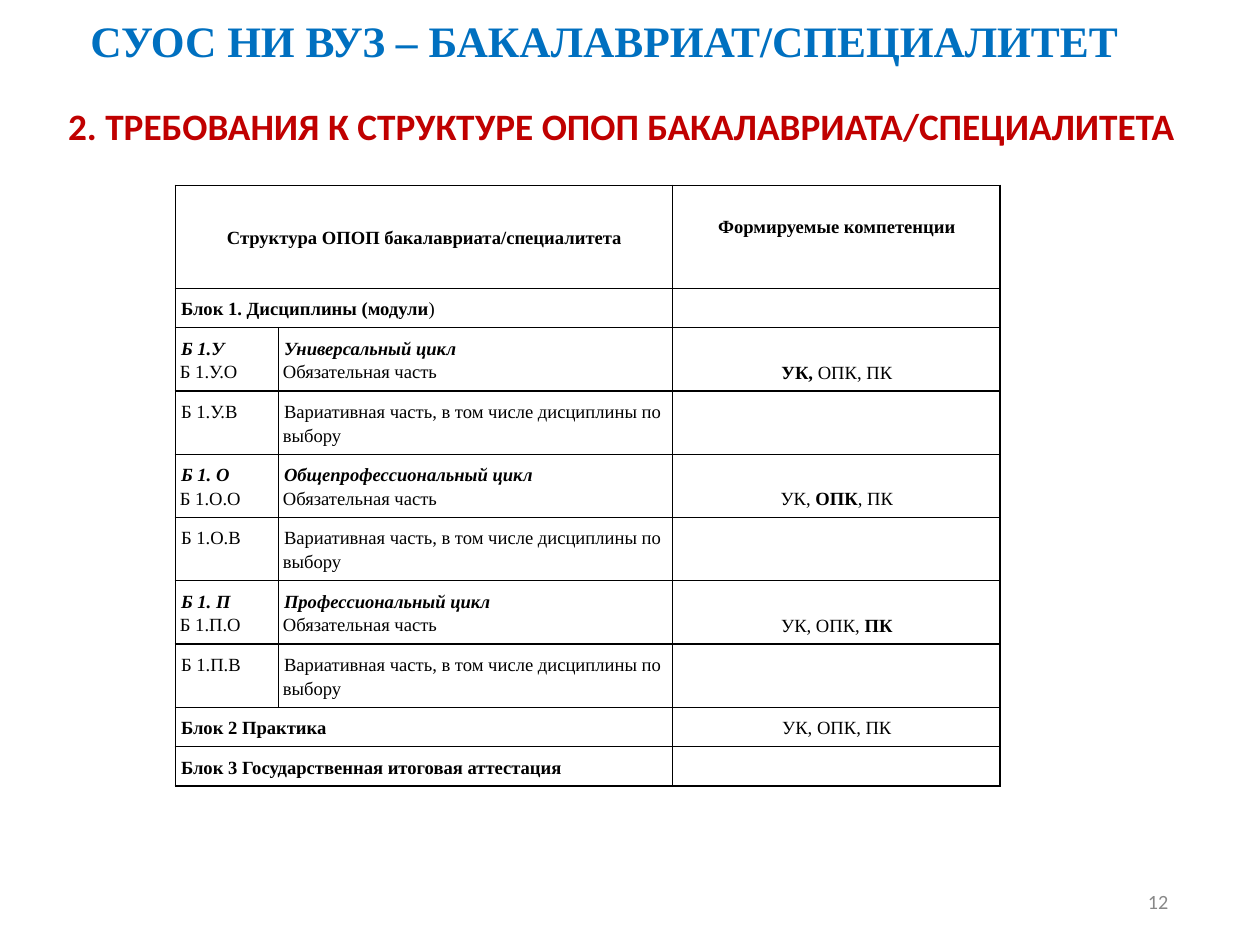
from dataclasses import dataclass
from lxml import etree
from pptx import Presentation
from pptx.dml.color import RGBColor
from pptx.enum.text import MSO_ANCHOR, PP_ALIGN
from pptx.oxml.ns import qn
from pptx.util import Pt

LEFT, CENTER, RIGHT = PP_ALIGN.LEFT, PP_ALIGN.CENTER, PP_ALIGN.RIGHT
TOP, MIDDLE = MSO_ANCHOR.TOP, MSO_ANCHOR.MIDDLE


@dataclass(frozen=True)
class Theme:
    serif: str = "Times New Roman"
    sans: str = "Calibri"
    title: str = "0070C0"
    heading: str = "C00000"
    number: str = "888888"
    ink: str = "000000"
    title_size: int = 28
    heading_size: int = 24
    number_size: int = 13
    cell_size: int = 12


theme = Theme()


def add_run(p, text, font, size, color, bold=False, italic=False):
    r = p.add_run()
    r.text = text
    for name, value in dict(name=font, size=Pt(size), bold=bold, italic=italic).items():
        setattr(r.font, name, value)
    r.font.color.rgb = RGBColor.from_string(color)


def add_borders(cell):
    """Draw thin lines on all four sides of a table cell."""
    tc_pr = cell._tc.get_or_add_tcPr()
    for side in ("lnL", "lnR", "lnT", "lnB"):
        ln = etree.SubElement(tc_pr, qn(f"a:{side}"), w=str(Pt(1)))
        fill = etree.SubElement(ln, qn("a:solidFill"))
        etree.SubElement(fill, qn("a:srgbClr"), val=theme.ink)


prs = Presentation()
prs.slide_width, prs.slide_height = Pt(812.16), Pt(609.12)
s = prs.slides.add_slide(prs.slide_layouts[6])

# Title, heading and slide number
texts = [
    ("СУОС НИ ВУЗ – БАКАЛАВРИАТ/СПЕЦИАЛИТЕТ", (54.7, -53.3, 700.6, 162.7),
     theme.serif, theme.title_size, theme.title, True, LEFT, MIDDLE, 0.9),
    ("2. ТРЕБОВАНИЯ К СТРУКТУРЕ ОПОП БАКАЛАВРИАТА/СПЕЦИАЛИТЕТА", (40.3, 66.2, 746.6, 542.9),
     theme.sans, theme.heading_size, theme.heading, True, LEFT, TOP, 0.9),
    ("12", (573.8, 570.2, 182.9, 22.3),
     theme.sans, theme.number_size, theme.number, False, RIGHT, MIDDLE, 1.0),
]
for text, box, font, size, color, bold, align, anchor, spacing in texts:
    tf = s.shapes.add_textbox(*map(Pt, box)).text_frame
    margins = dict.fromkeys(("margin_left", "margin_right", "margin_top", "margin_bottom"), Pt(3.6))
    for name, value in dict(margins, word_wrap=True, vertical_anchor=anchor).items():
        setattr(tf, name, value)
    p = tf.paragraphs[0]
    p.alignment, p.line_spacing = align, spacing
    add_run(p, text, font, size, color, bold)

# Table content: a cell is a list of paragraphs, a paragraph is a list of (text, style) runs
cycles = [
    ("Б 1.У", "Б 1.У", "Универсальный цикл", [("УК, ", "b"), ("ОПК, ПК", "")]),
    ("Б 1. О", "Б 1.О", "Общепрофессиональный цикл", [("УК, ", ""), ("ОПК", "b"), (", ПК", "")]),
    ("Б 1. П", "Б 1.П", "Профессиональный цикл", [("УК, ОПК, ", ""), ("ПК", "b")]),
]
HEADER, SINGLE, DOUBLE = 66.4, 25.4, 40.8
EMPTY = [[]]
rows = [
    (HEADER, [[[("Структура ОПОП бакалавриата/специалитета", "b")]], None,
              [[("Формируемые компетенции", "b")]]]),
    (SINGLE, [[[("Блок 1. Дисциплины (модули", "b"), (")", "")]], None, EMPTY]),
]
for label, code, cycle, skills in cycles:
    rows += [
        (DOUBLE, [[[(label, "bi")], [(f"{code}.О", "")]],
                  [[(cycle, "bi")], [("Обязательная часть", "")]], [skills]]),
        (DOUBLE, [[[(f"{code}.В", "")]],
                  [[("Вариативная часть, в том числе дисциплины по выбору", "")]], EMPTY]),
    ]
rows += [
    (SINGLE, [[[("Блок 2 Практика", "b")]], None, [[("УК, ОПК, ПК", "")]]]),
    (SINGLE, [[[("Блок 3 Государственная итоговая аттестация", "b")]], None, EMPTY]),
]

widths = [66.4, 254.2, 211]
PAD_TOP, PAD_BOTTOM = 5, 1.5
# Competences stand one line lower in the header and beside each cycle name
LOWERED = {HEADER: 13.5, SINGLE: 0, DOUBLE: 15.5}
table = s.shapes.add_table(len(rows), len(widths), Pt(113), Pt(119.4), Pt(sum(widths)),
                           Pt(sum(height for height, _ in rows))).table
table.first_row = table.horz_banding = False
for column, width in zip(table.columns, widths):
    column.width = Pt(width)

for i, (height, cells) in enumerate(rows):
    table.rows[i].height = Pt(height)
    if cells[1] is None:
        table.cell(i, 0).merge(table.cell(i, 1))
    for j, paragraphs in enumerate(cells):
        cell = table.cell(i, j)
        add_borders(cell)
        cell.fill.background()
        offset = LOWERED[height] if j == 2 and paragraphs != EMPTY else 0
        formats = dict(margin_left=Pt(3), margin_right=Pt(3),
                       margin_top=Pt(PAD_TOP + offset),
                       margin_bottom=Pt(PAD_TOP if i == 0 else PAD_BOTTOM),
                       vertical_anchor=MIDDLE if (i, j) == (0, 0) else TOP)
        for name, value in formats.items():
            setattr(cell, name, value)
        tf = cell.text_frame
        for k, runs in enumerate(paragraphs or EMPTY):
            p = tf.add_paragraph() if k else tf.paragraphs[0]
            p.alignment = CENTER if i == 0 or j == 2 else LEFT
            p.line_spacing = 1.15
            if k == 0:
                p._p.get_or_add_pPr().set("indent", str(Pt(0.7)))
            for text, style in runs:
                add_run(p, text, theme.serif, theme.cell_size, theme.ink, "b" in style, "i" in style)
            if not runs:
                etree.SubElement(p._p, qn("a:endParaRPr"), sz=str(theme.cell_size * 100))

prs.save("out.pptx")
